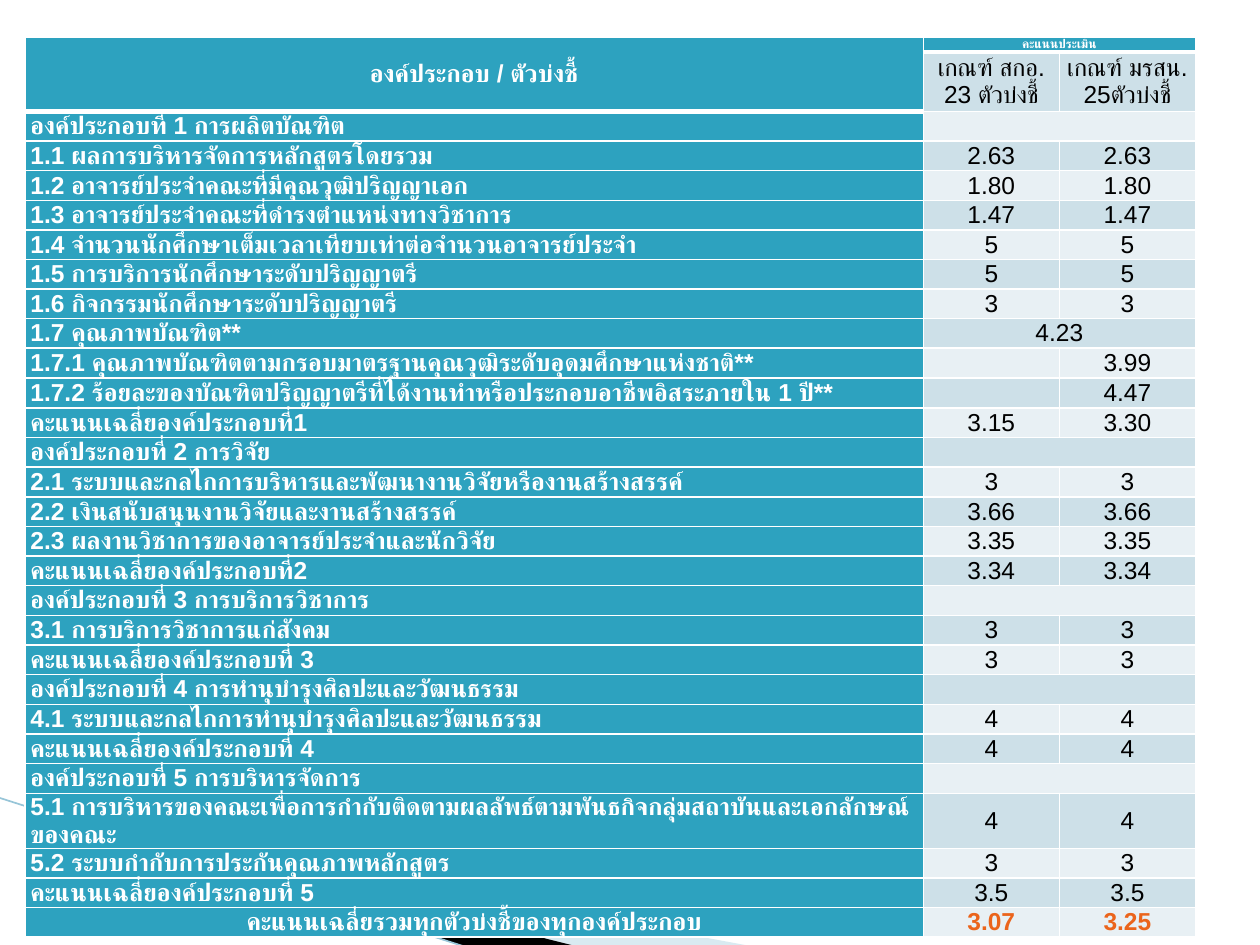
"""Build the slide of assessment scores by component and indicator."""
from lxml import etree
from pptx import Presentation
from pptx import util as u
from pptx.dml.color import RGBColor
from pptx.enum import shapes, text
from pptx.oxml.ns import qn

HUES = {"teal": "2DA2BF", "dark": "CDE0E8", "light": "E8F0F4", "white": "FFFFFF",
        "black": "000000", "orange": "EB641B", "sky": "A0CBDC", "edge": "97C5D8"}
ROWS = [
    ("องค์ประกอบที่ 1 การผลิตบัณฑิต",),
    ("1.1 ผลการบริหารจัดการหลักสูตรโดยรวม", "2.63", "2.63"),
    ("1.2 อาจารย์ประจำคณะที่มีคุณวุฒิปริญญาเอก", "1.80", "1.80"),
    ("1.3 อาจารย์ประจำคณะที่ดำรงตำแหน่งทางวิชาการ", "1.47", "1.47"),
    ("1.4 จำนวนนักศึกษาเต็มเวลาเทียบเท่าต่อจำนวนอาจารย์ประจำ", "5", "5"),
    ("1.5 การบริการนักศึกษาระดับปริญญาตรี", "5", "5"),
    ("1.6 กิจกรรมนักศึกษาระดับปริญญาตรี", "3", "3"),
    ("1.7 คุณภาพบัณฑิต**", "4.23"),
    ("1.7.1 คุณภาพบัณฑิตตามกรอบมาตรฐานคุณวุฒิระดับอุดมศึกษาแห่งชาติ**", "", "3.99"),
    ("1.7.2 ร้อยละของบัณฑิตปริญญาตรีที่ได้งานทำหรือประกอบอาชีพอิสระภายใน 1 ปี**", "", "4.47"),
    ("คะแนนเฉลี่ยองค์ประกอบที่1", "3.15", "3.30"),
    ("องค์ประกอบที่ 2 การวิจัย",),
    ("2.1 ระบบและกลไกการบริหารและพัฒนางานวิจัยหรืองานสร้างสรรค์", "3", "3"),
    ("2.2 เงินสนับสนุนงานวิจัยและงานสร้างสรรค์", "3.66", "3.66"),
    ("2.3 ผลงานวิชาการของอาจารย์ประจำและนักวิจัย", "3.35", "3.35"),
    ("คะแนนเฉลี่ยองค์ประกอบที่2", "3.34", "3.34"),
    ("องค์ประกอบที่ 3 การบริการวิชาการ",),
    ("3.1 การบริการวิชาการแก่สังคม", "3", "3"),
    ("คะแนนเฉลี่ยองค์ประกอบที่ 3", "3", "3"),
    ("องค์ประกอบที่ 4 การทำนุบำรุงศิลปะและวัฒนธรรม",),
    ("4.1 ระบบและกลไกการทำนุบำรุงศิลปะและวัฒนธรรม", "4", "4"),
    ("คะแนนเฉลี่ยองค์ประกอบที่ 4", "4", "4"),
    ("องค์ประกอบที่ 5 การบริหารจัดการ",),
    ("5.1 การบริหารของคณะเพื่อการกำกับติดตามผลลัพธ์ตามพันธกิจกลุ่มสถาบันและเอกลักษณ์ของคณะ", "4", "4"),
    ("5.2 ระบบกำกับการประกันคุณภาพหลักสูตร", "3", "3"),
    ("คะแนนเฉลี่ยองค์ประกอบที่ 5", "3.5", "3.5"),
    ("คะแนนเฉลี่ยรวมทุกตัวบ่งชี้ของทุกองค์ประกอบ", "3.07", "3.25"),
]


def write(frame, words, size=14, face="Arial", hue="black", bold=False, mid=True):
    para = frame.paragraphs[0]
    para.alignment = text.PP_ALIGN.CENTER if mid else text.PP_ALIGN.LEFT
    para.text = words
    for run in para.runs:
        font = run.font
        font.size, font.name, font.bold = u.Pt(size), face, bold
        font.color.rgb = RGBColor.from_string(HUES[hue])
        etree.SubElement(font._element, qn("a:cs"), typeface=face)
    if not words:
        etree.SubElement(para._p, qn("a:endParaRPr"), sz=str(size * 100))


class Page:
    def __init__(self, deck):
        self.slide = deck.slides.add_slide(deck.slide_layouts[6])
        self.items = self.slide.shapes

    def paint(self, item, hue):
        item.fill.solid()
        item.fill.fore_color.rgb = RGBColor.from_string(HUES[hue])

    def wedge(self, spots, hue, alpha=None):
        first, *rest = [(u.Pt(x), u.Pt(y)) for x, y in spots]
        pen = self.items.build_freeform(*first, scale=1.0)
        pen.add_line_segments(rest, close=True)
        shape = pen.convert_to_shape()
        shape.shadow.inherit = False
        shape.line.fill.background()
        self.paint(shape, hue)
        if alpha:
            tint = shape._element.spPr.find(".//" + qn("a:srgbClr"))
            etree.SubElement(tint, qn("a:alpha"), val=str(alpha * 1000))

    def line(self, x, y, end_x, end_y, hue, width):
        rule = self.items.add_connector(
            shapes.MSO_CONNECTOR.STRAIGHT, u.Pt(x), u.Pt(y), u.Pt(end_x), u.Pt(end_y))
        rule.line.width = u.Pt(width)
        rule.line.color.rgb = RGBColor.from_string(HUES[hue])
        etree.SubElement(rule._element.spPr, qn("a:effectLst"))

    def grid(self, x, y, cols, rows):
        frame = self.items.add_table(
            len(rows), len(cols), u.Pt(x), u.Pt(y), u.Pt(sum(cols)), u.Pt(sum(rows)))
        table = frame.table
        table.horz_banding = False
        for part, size in zip(table.columns, cols):
            part.width = u.Pt(size)
        for part, size in zip(table.rows, rows):
            part.height = u.Pt(size)
        return table

    def cell(self, cell, words, fill, base=1, **style):
        cell.margin_left = cell.margin_right = u.Pt(3)
        cell.margin_top = cell.margin_bottom = 0
        cell.vertical_anchor = text.MSO_ANCHOR.MIDDLE
        write(cell.text_frame, words, **style)
        props = cell._tc.get_or_add_tcPr()
        for side, width in zip("LRTB", (1, 1, 1, base)):
            edge = etree.SubElement(props, qn("a:ln" + side), w=str(u.Pt(width)))
            solid = etree.SubElement(edge, qn("a:solidFill"))
            etree.SubElement(solid, qn("a:srgbClr"), val=HUES["white"])
        self.paint(cell, fill)


def main():
    deck = Presentation()
    deck.slide_width, deck.slide_height = u.Pt(720), u.Pt(540)
    page = Page(deck)
    page.wedge([(39.6, 468.5), (428.4, 540.5), (328.3, 540.5), (39.6, 468)], "sky", alpha=40)
    page.wedge([(38.2, 467.3), (329, 540.7), (267.8, 541.4), (38.9, 468)], "black")
    page.line(-0.7, 455.8, 267.1, 541.4, "edge", 0.95)

    table = page.grid(14.4, 21.2, [513.2, 77.8, 77.8], [8.6, 33.8] + [16.9] * len(ROWS))
    head = {"hue": "white", "bold": True}
    title = "องค์ประกอบ / ตัวบ่งชี้"
    page.cell(table.cell(0, 0), title, "teal", base=3, **head)
    page.cell(table.cell(1, 0), "", "teal", base=3)
    page.cell(table.cell(0, 1), "คะแนนประเมิน", "teal", base=3, size=7,
              face="DejaVu Sans Mono", **head)
    page.cell(table.cell(0, 2), "", "teal", base=3, size=7)
    for col, words in enumerate(("เกณฑ์ สกอ.\v23 ตัวบ่งชี้", "เกณฑ์ มรสน.\v25ตัวบ่งชี้"), 1):
        page.cell(table.cell(1, col), words, "dark")
    table.cell(0, 0).merge(table.cell(1, 0))
    table.cell(0, 1).merge(table.cell(0, 2))

    for row, (label, *marks) in enumerate(ROWS, 2):
        last = row == len(ROWS) + 1
        page.cell(table.cell(row, 0), label, "teal", mid=last, **head)
        for col, mark in enumerate((marks + ["", ""])[:2], 1):
            page.cell(table.cell(row, col), mark, "dark" if row % 2 else "light",
                      hue="orange" if last else "black", bold=last)
        if len(marks) < 2:
            table.cell(row, 1).merge(table.cell(row, 2))
    deck.save("out.pptx")


if __name__ == "__main__":
    main()
